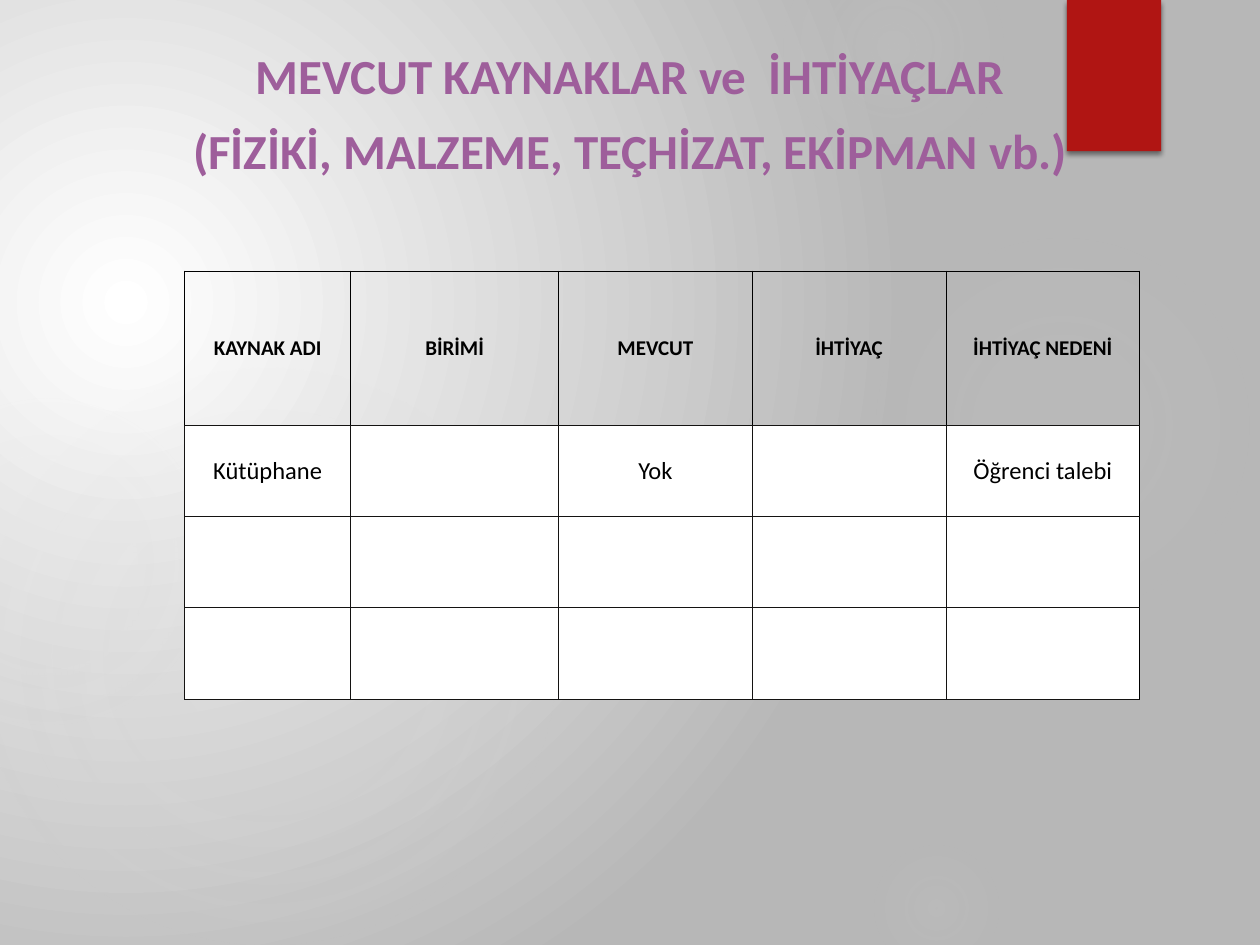
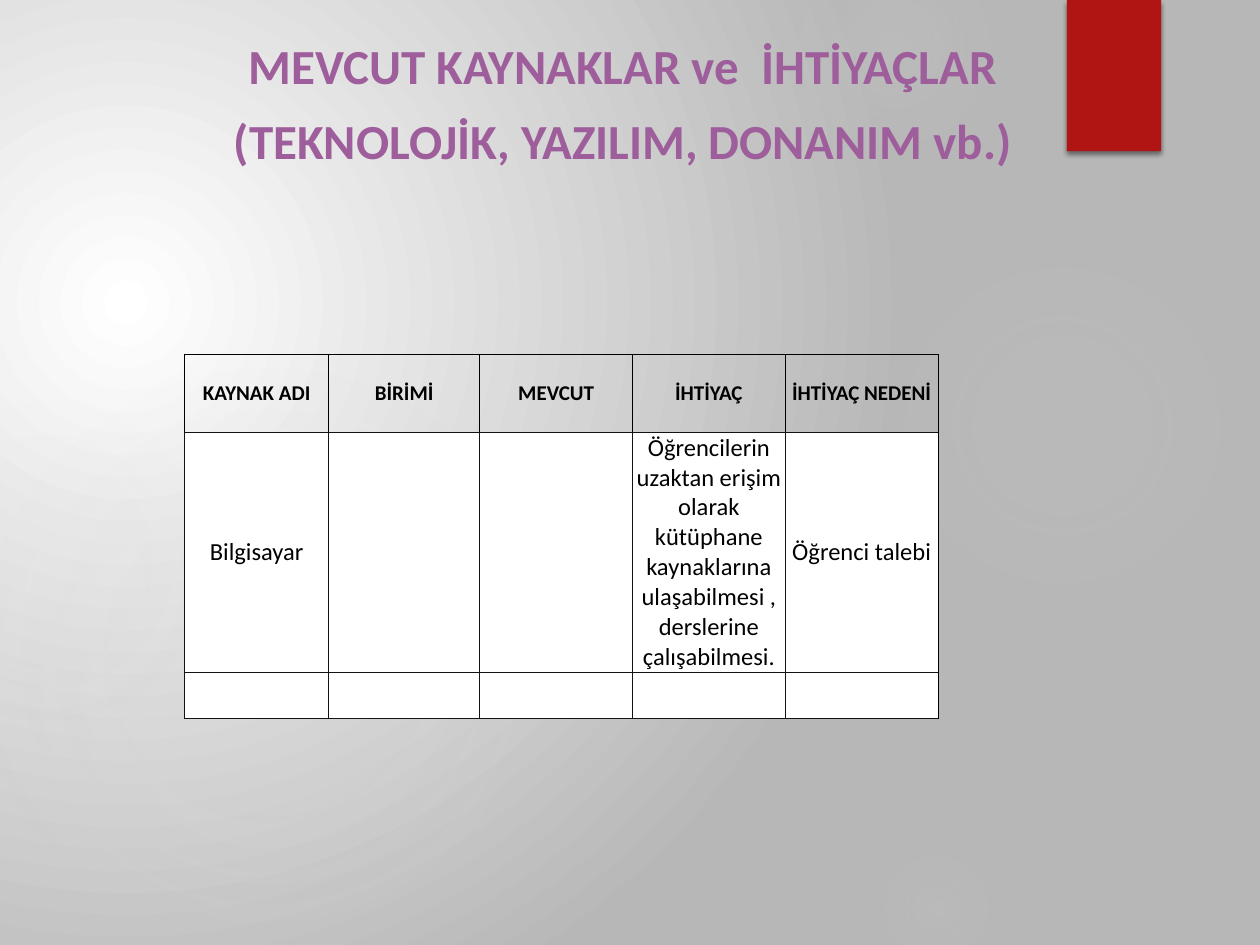
from lxml import etree
from pptx import Presentation
from pptx.dml.color import RGBColor as Rgb
from pptx.enum.shapes import MSO_SHAPE as Shape
from pptx.enum.text import MSO_ANCHOR as Anchor, PP_ALIGN as Align
from pptx.oxml import parse_xml
from pptx.oxml.ns import nsdecls, qn
from pptx.util import Inches, Pt

COLORS = {
    "glow": "FFFFFF", "backdrop": "B7B7B7", "bubble": "D9D9D9",
    "ribbon": "B01513", "title": "9E5E9B", "ink": "000000",
    "edge": "141312", "cell": "FFFFFF",
}
FONT = "Calibri"
WIDTH, HEIGHT = Inches(10), Inches(7.5)
COLUMNS, ROWS = 120, 90  # square grid cells of 1/12 inch

# column, row, diameter, gradient stops as (position %, opacity %)
BUBBLES = [
    (82.7, 22, 37, [(0, 7), (36, 6), (69, 0)]),
    (74.6, -6, 21, [(0, 14), (36, 7), (73, 0)]),
    (82.7, 80, 13, [(0, 9), (36, 5), (66, 0)]),
    (-2, 35, 55, [(0, 11), (36, 10), (75, 0)]),
    (-11, 38, 31, [(0, 8), (36, 8), (72, 0)]),
]
HEADINGS = ["KAYNAK ADI", "BİRİMİ", "MEVCUT", "İHTİYAÇ", "İHTİYAÇ NEDENİ"]
TITLE_START = "MEVCUT KAYNAKLAR ve  İHTİYAÇLAR"
TABLE_LEFT = 17.6

PAGES = [
    dict(
        title=[TITLE_START, "(FİZİKİ, MALZEME, TEÇHİZAT, EKİPMAN vb.)"],
        title_box=(6.2, 10, 107.6, 7.7),
        table_top=25.8,
        widths=[15.8, 19.8] + [18.45] * 3,
        heights=[14.7] + [8.7] * 3,
        resources=[["Kütüphane", "", "Yok", "", "Öğrenci talebi"],
                   [""] * 5, [""] * 5],
    ),
    dict(
        title=[TITLE_START, "(TEKNOLOJİK, YAZILIM, DONANIM vb.)"],
        title_box=(20.6, 4.6, 77.4, 12.1),
        table_top=33.8,
        widths=[13.7, 14.4] + [14.55] * 3,
        heights=[7.4, 22.8, 4.4],
        resources=[["Bilgisayar", "", "",
                    "Öğrencilerin uzaktan erişim olarak kütüphane "
                    "kaynaklarına ulaşabilmesi , derslerine çalışabilmesi.",
                    "Öğrenci talebi"],
                   [""] * 5],
    ),
]


def across(columns):
    return round(WIDTH * columns / COLUMNS)


def down(rows):
    return round(HEIGHT * rows / ROWS)


def box(left, top, width, height):
    return across(left), down(top), across(width), down(height)


def write(frame, lines, size, color="ink", bold=False, spacing=None, after=None):
    """Fill a text frame with one centred paragraph per line."""
    for number, line in enumerate(lines):
        paragraph = frame.add_paragraph() if number else frame.paragraphs[0]
        paragraph.alignment = Align.CENTER
        paragraph.line_spacing = spacing
        paragraph.space_after = after
        run = paragraph.add_run()
        run.text = line
        run.font.name = FONT
        run.font.size = Pt(size)
        run.font.bold = bold
        run.font.color.rgb = Rgb.from_string(COLORS[color])


def make_radial(owner, stops, focus):
    """Turn the owner's gradient into a circular one; stops are (%, colour, opacity %)."""
    stop_xml = "".join(
        f'<a:gs pos="{position * 1000}"><a:srgbClr val="{COLORS[color]}">'
        f'<a:alpha val="{opacity * 1000}"/></a:srgbClr></a:gs>'
        for position, color, opacity in stops)
    sides = " ".join(f'{side}="{share * 1000}"' for side, share in zip("ltrb", focus))
    radial = parse_xml(
        f'<a:gradFill {nsdecls("a")} rotWithShape="1"><a:gsLst>{stop_xml}</a:gsLst>'
        f'<a:path path="circle"><a:fillToRect {sides}/></a:path></a:gradFill>')
    linear = owner.find(".//" + qn("a:gradFill"))
    linear.getparent().replace(linear, radial)


def add_border(cell, side, color):
    line = etree.SubElement(cell._tc.get_or_add_tcPr(), qn(f"a:ln{side}"), w=str(Pt(0.5)))
    fill = etree.SubElement(line, qn("a:solidFill"))
    etree.SubElement(fill, qn("a:srgbClr"), val=COLORS[color])


class Deck:
    def __init__(self):
        self.presentation = Presentation()
        self.presentation.slide_width = WIDTH
        self.presentation.slide_height = HEIGHT
        self.slide = None

    def new_slide(self):
        self.slide = self.presentation.slides.add_slide(self.presentation.slide_layouts[6])
        self.slide.background.fill.gradient()
        make_radial(self.slide.element,
                    [(0, "glow", 100), (100, "backdrop", 100)], (45, 65, 125, 100))
        for left, top, diameter, fades in BUBBLES:
            self.bubble(left, top, diameter, fades)
        self.ribbon(101.6, 0, 9, 14.4)

    def outline_free(self, kind, *place):
        shape = self.slide.shapes.add_shape(kind, *box(*place))
        shape.shadow.inherit = False
        shape.line.fill.background()
        return shape

    def bubble(self, left, top, diameter, fades):
        bubble = self.outline_free(Shape.OVAL, left, top, diameter, diameter)
        bubble.fill.gradient()
        make_radial(bubble.element,
                    [(position, "bubble", opacity) for position, opacity in fades],
                    (50, 50, 50, 50))

    def ribbon(self, *place):
        ribbon = self.outline_free(Shape.RECTANGLE, *place)
        ribbon.fill.solid()
        ribbon.fill.fore_color.rgb = Rgb.from_string(COLORS["ribbon"])
        effects = ribbon.element.spPr.find(qn("a:effectLst"))
        effects.append(parse_xml(
            f'<a:outerShdw {nsdecls("a")} blurRad="{Pt(3)}" dist="{Pt(2)}" dir="5400000" '
            f'rotWithShape="0"><a:srgbClr val="{COLORS["ink"]}">'
            '<a:alpha val="45000"/></a:srgbClr></a:outerShdw>'))

    def title(self, lines, place):
        frame = self.slide.shapes.add_textbox(*box(*place)).text_frame
        frame.word_wrap = True
        frame.vertical_anchor = Anchor.BOTTOM
        write(frame, lines, 28, "title", bold=True, spacing=1.1, after=Pt(6))

    def table(self, top, widths, heights, rows):
        place = box(TABLE_LEFT, top, sum(widths), sum(heights))
        table = self.slide.shapes.add_table(len(rows), len(widths), *place).table
        table.first_row = table.horz_banding = False
        for column, width in zip(table.columns, widths):
            column.width = across(width)
        for number, (row, height, texts) in enumerate(zip(table.rows, heights, rows)):
            row.height = down(height)
            for cell, text in zip(row.cells, texts):
                self.cell(cell, text, heading=number == 0)

    def cell(self, cell, text, heading):
        cell.margin_left = cell.margin_right = cell.margin_top = cell.margin_bottom = 0
        cell.vertical_anchor = Anchor.MIDDLE
        for side in "LRTB":
            black = side == "R" or (heading and side != "B")
            add_border(cell, side, "ink" if black else "edge")
        if heading:
            cell.fill.background()
        else:
            cell.fill.solid()
            cell.fill.fore_color.rgb = Rgb.from_string(COLORS["cell"])
        if text:
            write(cell.text_frame, [text], 12 if heading else 14, bold=heading)


def main():
    deck = Deck()
    for page in PAGES:
        deck.new_slide()
        deck.title(page["title"], page["title_box"])
        deck.table(page["table_top"], page["widths"], page["heights"],
                   [HEADINGS] + page["resources"])
    deck.presentation.save("out.pptx")


if __name__ == "__main__":
    main()
